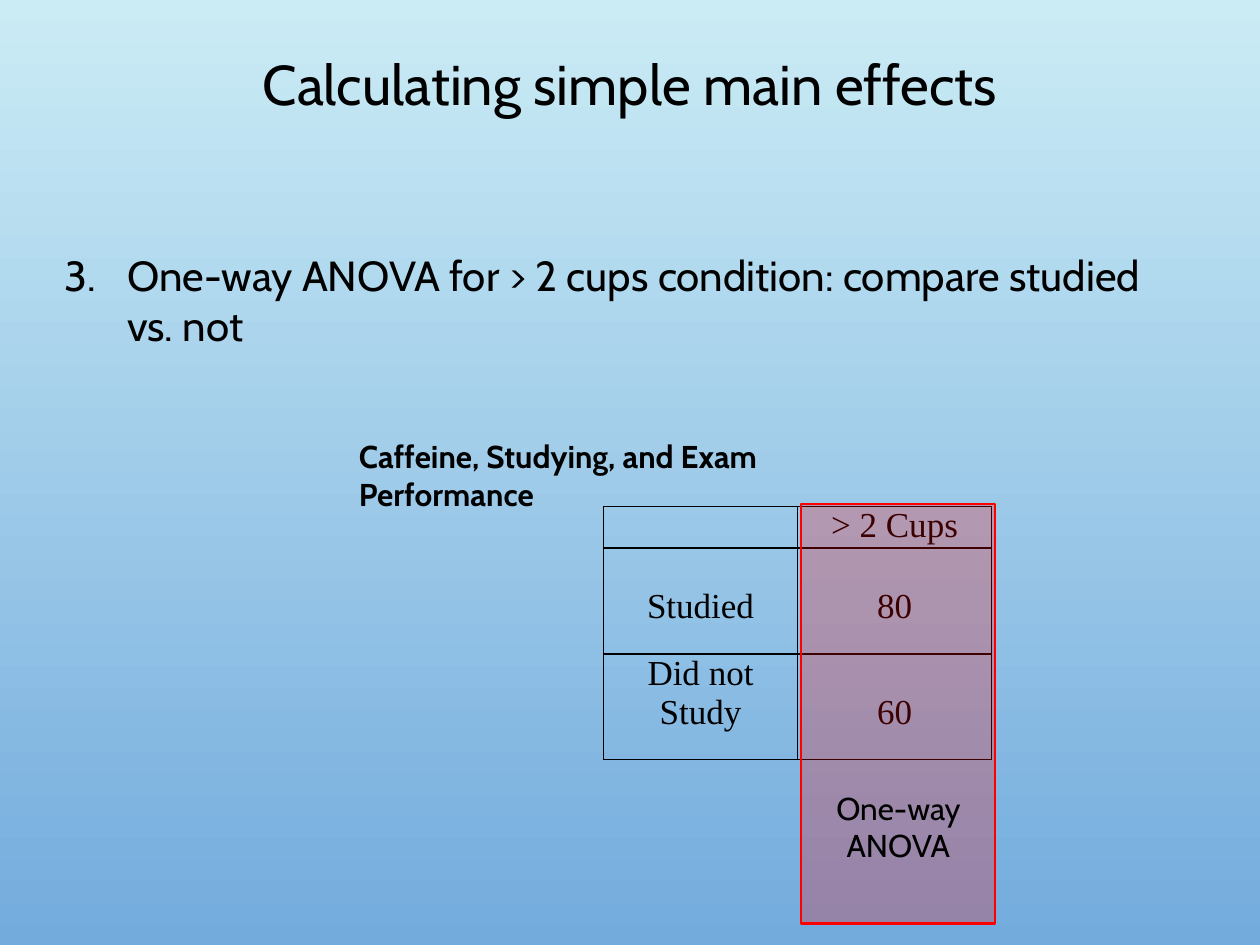
"""Build a slide on the simple main effect of studying at over two cups."""
from dataclasses import dataclass

from lxml import etree
from pptx import Presentation
from pptx.dml.color import RGBColor
from pptx.enum.shapes import MSO_SHAPE
from pptx.enum.text import MSO_ANCHOR, MSO_AUTO_SIZE, PP_ALIGN
from pptx.oxml.ns import qn
from pptx.util import Pt

RECT = MSO_SHAPE.RECTANGLE
MID, LOW = MSO_ANCHOR.MIDDLE, MSO_ANCHOR.BOTTOM
LEFT, MIDDLE = PP_ALIGN.LEFT, PP_ALIGN.CENTER
FIXED = MSO_AUTO_SIZE.NONE
SCALE = 9144


@dataclass(frozen=True)
class Theme:
    sans: str = "Cabin"
    serif: str = "Times New Roman"
    ink: str = "000000"
    mark: str = "FF0000"
    sky: tuple = ("CBECF5", "73ABDD")
    head: int = 32
    body: int = 24
    cell: int = 20
    note: int = 18


def px(num):
    return num * SCALE


def rgb(code):
    return RGBColor.from_string(code)


def sub(parent, tag, **attrs):
    node = etree.SubElement(parent, qn(tag))
    for key, value in attrs.items():
        node.set(key, str(value))
    return node


class Deck:
    def __init__(self, theme):
        self.theme = theme
        self.prs = Presentation()
        self.prs.slide_width, self.prs.slide_height = px(1000), px(750)
        self.slide = self.prs.slides.add_slide(self.prs.slide_layouts[5])

    def back(self):
        fill = self.slide.background.fill
        fill.gradient()
        fill.gradient_angle = 270
        for stop, code in zip(fill.gradient_stops, self.theme.sky):
            stop.color.rgb = rgb(code)

    def words(self, frame, text, size, face=None, align=LEFT, bold=False):
        frame.word_wrap = True
        para = frame.paragraphs[0]
        para.text = text
        para.alignment = align
        for run in para.runs:
            font = run.font
            font.name = face or self.theme.sans
            font.size, font.bold = Pt(size), bold
            font.color.rgb = rgb(self.theme.ink)
        return para

    def title(self, text, *area):
        head = self.slide.shapes.title
        head.left, head.top, head.width, head.height = map(px, area)
        frame = head.text_frame
        frame.auto_size, frame.vertical_anchor = FIXED, MID
        para = self.words(frame, text, self.theme.head, align=MIDDLE)
        para.line_spacing = 0.9

    def label(self, text, size, *area, bold=False):
        box = self.slide.shapes.add_textbox(*map(px, area))
        self.words(box.text_frame, text, size, bold=bold)
        return box.text_frame

    def step(self, text, start, *area):
        frame = self.label(text, self.theme.body, *area)
        frame.vertical_anchor = LOW
        props = frame.paragraphs[0]._p.get_or_add_pPr()
        props.set("marL", str(px(50)))
        props.set("indent", str(px(-50)))
        sub(props, "a:buAutoNum", type="arabicPeriod", startAt=start)

    def edge(self, cell):
        props = cell._tc.get_or_add_tcPr()
        for spot, side in enumerate("LRTB"):
            line = sub(props, f"a:ln{side}", w=Pt(1))
            sub(sub(line, "a:solidFill"), "a:srgbClr", val=self.theme.ink)
            props.insert(spot, line)

    def table(self, rows, highs, wide, left, top):
        cols = len(rows[0])
        frame = self.slide.shapes.add_table(
            len(rows), cols, px(left), px(top), px(wide * cols), px(sum(highs)))
        grid = frame.table
        grid.first_row = grid.horz_banding = False
        for col in grid.columns:
            col.width = px(wide)
        for r, (row, high) in enumerate(zip(rows, highs)):
            grid.rows[r].height = px(high)
            for c, (text, drop) in enumerate(row):
                cell = grid.cell(r, c)
                cell.margin_left = cell.margin_right = px(7)
                cell.margin_top, cell.margin_bottom = px(drop), 0
                cell.fill.background()
                self.words(cell.text_frame, text, self.theme.cell,
                           self.theme.serif, MIDDLE)
                self.edge(cell)

    def cover(self, text, alpha, pad, *area):
        box = self.slide.shapes.add_shape(RECT, *map(px, area))
        box.shadow.inherit = False
        box.fill.solid()
        box.fill.fore_color.rgb = rgb(self.theme.mark)
        tint = box._element.spPr.find(qn("a:solidFill"))[0]
        sub(tint, "a:alpha", val=alpha * 1000)
        box.line.color.rgb = rgb(self.theme.mark)
        box.line.width = Pt(1.25)
        frame = box.text_frame
        frame.vertical_anchor, frame.margin_bottom = LOW, px(pad)
        self.words(frame, text, self.theme.note, align=MIDDLE)

    def save(self):
        self.prs.save("out.pptx")


def main():
    deck = Deck(Theme())
    deck.back()
    deck.title("Calculating simple main effects", 50, 30, 900, 78)
    rows = [
        [("", 0), ("> 2 Cups", 0)],
        [("Studied", 31), ("80", 31)],
        [("Did not Study", 0), ("60", 31)],
    ]
    deck.table(rows, [33, 84, 84], 154, 479, 402)
    deck.label("Caffeine, Studying, and Exam Performance", deck.theme.note,
               275, 342, 464, 40, bold=True)
    deck.cover("One-way ANOVA", 24, 47, 636, 400, 154, 333)
    deck.step("One-way ANOVA for > 2 cups condition: compare studied vs. not",
              3, 41, 125, 875, 158)
    deck.save()


if __name__ == "__main__":
    main()
